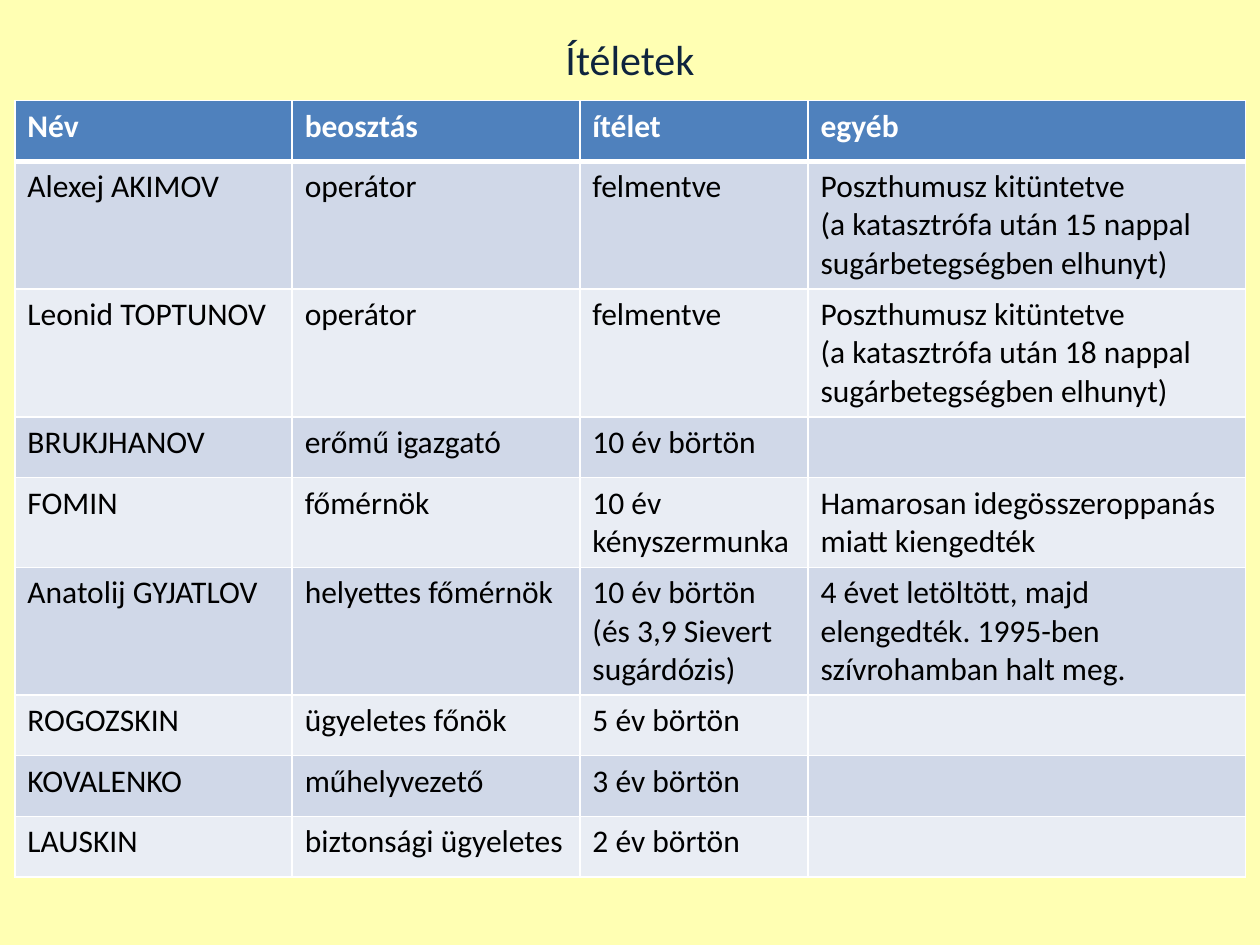
from pptx import Presentation
from pptx.dml.color import RGBColor
from pptx.enum.text import MSO_ANCHOR, MSO_AUTO_SIZE, PP_ALIGN
from pptx.oxml import parse_xml
from pptx.oxml.ns import nsdecls
from pptx.util import Cm, Pt

COLORS = {
    "background": "FFFFB3",
    "title": "0F243E",
    "header": "4F81BD",
    "odd": "D0D8E8",
    "even": "E9EDF4",
    "white": "FFFFFF",
    "black": "000000",
}
FONT = "Calibri"
COLUMN_WIDTHS = (5.59, 5.8, 4.6, 8.82)
ROW_HEIGHT = 1.22
VERDICTS = [
    ("Név", "beosztás", "ítélet", "egyéb"),
    ("Alexej AKIMOV", "operátor", "felmentve",
     "Poszthumusz kitüntetve\n(a katasztrófa után 15 nappal sugárbetegségben elhunyt)"),
    ("Leonid TOPTUNOV", "operátor", "felmentve",
     "Poszthumusz kitüntetve\n(a katasztrófa után 18 nappal sugárbetegségben elhunyt)"),
    ("BRUKJHANOV", "erőmű igazgató", "10 év börtön", ""),
    ("FOMIN", "főmérnök", "10 év kényszermunka",
     "Hamarosan idegösszeroppanás miatt kiengedték"),
    ("Anatolij GYJATLOV", "helyettes főmérnök",
     "10 év börtön\v(és 3,9 Sievert sugárdózis)",
     "4 évet letöltött, majd elengedték. 1995-ben szívrohamban halt meg."),
    ("ROGOZSKIN", "ügyeletes főnök", "5 év börtön", ""),
    ("KOVALENKO", "műhelyvezető", "3 év börtön", ""),
    ("LAUSKIN", "biztonsági ügyeletes", "2 év börtön", ""),
]


def color(name):
    """Return the named palette colour."""
    return RGBColor.from_string(COLORS[name])


def style_paragraphs(frame, size, color_name, bold=False):
    """Give every paragraph of a text frame the same font."""
    for para in frame.paragraphs:
        para.font.name = FONT
        para.font.size = Pt(size)
        para.font.bold = bold
        para.font.color.rgb = color(color_name)


def set_borders(cell, bottom_width):
    """Draw white lines on the four sides of a cell."""
    properties = cell._tc.get_or_add_tcPr()
    sides = (("lnL", 1), ("lnR", 1), ("lnT", 1), ("lnB", bottom_width))
    for position, (side, width) in enumerate(sides):
        properties.insert(position, parse_xml(
            f'<a:{side} {nsdecls("a")} w="{Pt(width)}"><a:solidFill>'
            f'<a:srgbClr val="{COLORS["white"]}"/></a:solidFill></a:{side}>'))


def add_title(page, text, left, top, width, height):
    """Place the slide title in the given box."""
    title = page.shapes.title
    title.left, title.top, title.width, title.height = left, top, width, height
    frame = title.text_frame
    frame.text = text
    frame.word_wrap = True
    frame.auto_size = MSO_AUTO_SIZE.NONE
    frame.vertical_anchor = MSO_ANCHOR.TOP
    frame.paragraphs[0].alignment = PP_ALIGN.CENTER
    style_paragraphs(frame, 24, "title")


def add_verdict_table(page, left, top):
    """Place the table of verdicts with its corner at the given point."""
    table = page.shapes.add_table(
        len(VERDICTS), len(COLUMN_WIDTHS), left, top,
        Cm(sum(COLUMN_WIDTHS)), Cm(ROW_HEIGHT * len(VERDICTS))).table
    for column, width in zip(table.columns, COLUMN_WIDTHS):
        column.width = Cm(width)
    for row_index, values in enumerate(VERDICTS):
        table.rows[row_index].height = Cm(ROW_HEIGHT)
        is_header = row_index == 0
        band = "header" if is_header else ("even", "odd")[row_index % 2]
        for column_index, value in enumerate(values):
            cell = table.cell(row_index, column_index)
            cell.text = value
            cell.fill.solid()
            cell.fill.fore_color.rgb = color(band)
            set_borders(cell, 3 if is_header else 1)
            style_paragraphs(cell.text_frame, 18,
                             "white" if is_header else "black", is_header)


def main():
    """Build and save the deck."""
    deck = Presentation()
    deck.slide_width, deck.slide_height = Cm(25.4), Cm(19.05)
    page = deck.slides.add_slide(deck.slide_layouts[5])
    page.background.fill.solid()
    page.background.fill.fore_color.rgb = color("background")
    add_title(page, "Ítéletek", 0, Cm(0.54), deck.slide_width, Cm(1.28))
    add_verdict_table(page, Cm(0.3), Cm(2.03))
    deck.save("out.pptx")


if __name__ == "__main__":
    main()
